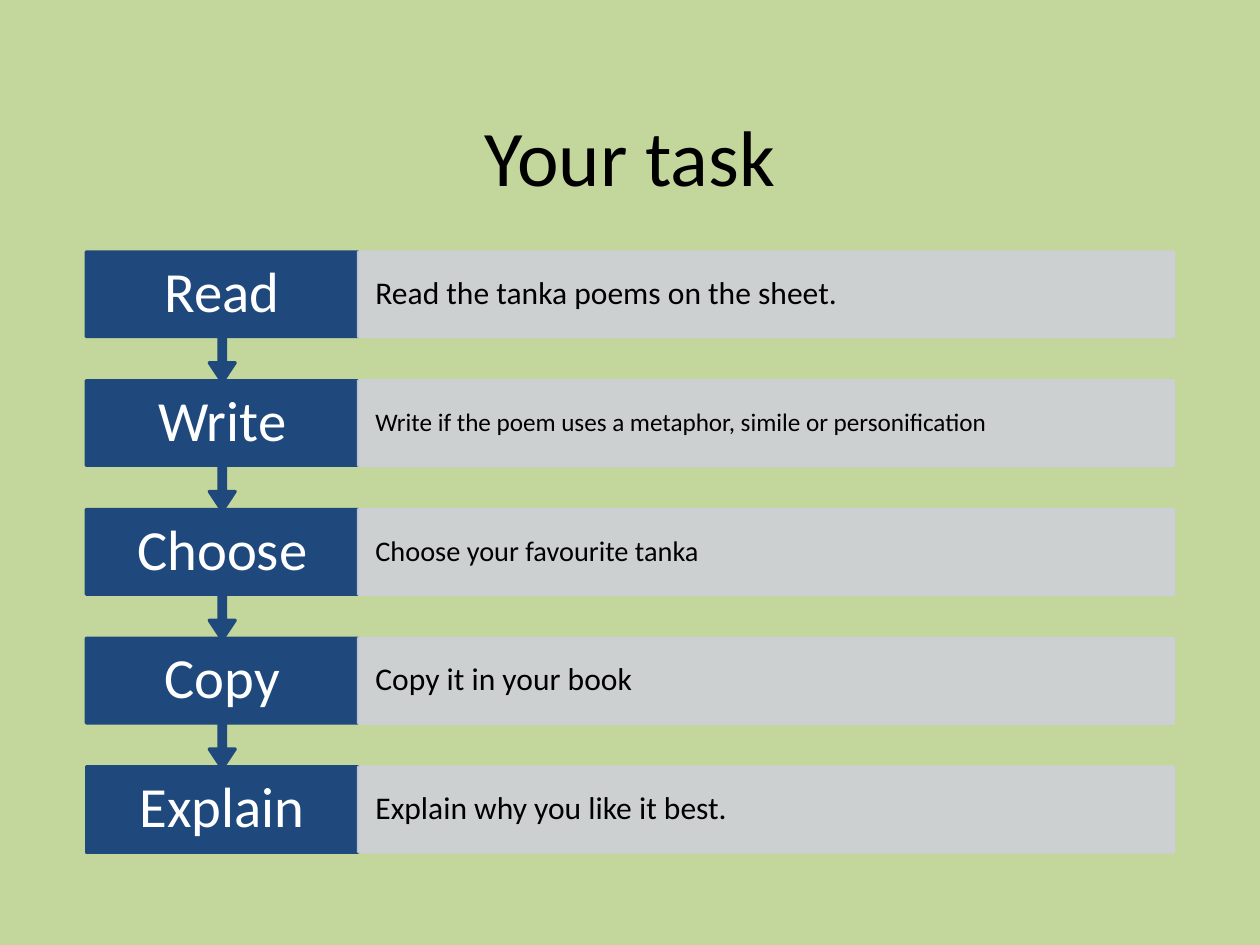
from lxml import etree
from pptx import Presentation
from pptx.dml.color import RGBColor
from pptx.enum.shapes import MSO_SHAPE
from pptx.enum.text import MSO_ANCHOR, PP_ALIGN
from pptx.oxml.ns import qn
from pptx.util import Inches, Pt

TITLE = "Your task"
STEPS = [
    ("Read", "Read the tanka poems on the sheet.", 20),
    ("Write", "Write if the poem uses a metaphor, simile or personification", 16),
    ("Choose", "Choose your favourite tanka", 18),
    ("Copy", "Copy it in your book", 20),
    ("Explain", "Explain why you like it best.", 20),
]

GREEN = RGBColor(0xC3, 0xD6, 0x9B)
NAVY = RGBColor(0x1F, 0x49, 0x7D)
GREY = RGBColor(0xCD, 0xD0, 0xD7)
BLACK = RGBColor(0, 0, 0)
WHITE = RGBColor(0xFF, 0xFF, 0xFF)
RECTANGLE = MSO_SHAPE.RECTANGLE
ARROW_BOX = MSO_SHAPE.DOWN_ARROW_CALLOUT
MIDDLE = MSO_ANCHOR.MIDDLE
LEFT, CENTER = PP_ALIGN.LEFT, PP_ALIGN.CENTER

FONT = "Calibri"
MARGIN = 0.76
VERB_WIDTH, DETAIL_WIDTH = 2.4, 7.19
FIRST_TOP, PITCH = 2.22, 1.135
BOX_HEIGHT, ARROW_BOX_HEIGHT = 0.75, 1.15
ARROW_PROPORTIONS = (0.05, 0.1, 0.15, 0.65)
OPACITY = 90


def write(shape, text, size, color, align, inset):
    frame = shape.text_frame
    frame.word_wrap = True
    frame.vertical_anchor = MIDDLE
    frame.margin_left = frame.margin_right = Inches(inset)
    frame.margin_top = frame.margin_bottom = 0
    paragraph = frame.paragraphs[0]
    paragraph.text = text
    paragraph.alignment = align
    paragraph.line_spacing = 0.9
    paragraph.font.name = FONT
    paragraph.font.size = Pt(size)
    paragraph.font.color.rgb = color


def add_box(slide, kind, left, top, width, height, color):
    box = slide.shapes.add_shape(
        kind, Inches(left), Inches(top), Inches(width), Inches(height))
    box.shadow.inherit = False
    box.fill.solid()
    box.fill.fore_color.rgb = color
    box.line.color.rgb = color
    box.line.width = Pt(2)
    return box


def make_translucent(box):
    for color in box._element.spPr.iter(qn("a:srgbClr")):
        etree.SubElement(color, qn("a:alpha")).set("val", str(OPACITY * 1000))


def add_step(slide, index):
    verb, detail, detail_size = STEPS[index]
    top = FIRST_TOP + index * PITCH
    if index == len(STEPS) - 1:
        verb_box = add_box(slide, RECTANGLE, MARGIN, top, VERB_WIDTH, BOX_HEIGHT, NAVY)
    else:
        verb_box = add_box(slide, ARROW_BOX, MARGIN, top, VERB_WIDTH, ARROW_BOX_HEIGHT, NAVY)
        for number, proportion in enumerate(ARROW_PROPORTIONS):
            verb_box.adjustments[number] = proportion
    write(verb_box, verb, 36, WHITE, CENTER, 0.17)

    detail_box = add_box(
        slide, RECTANGLE, MARGIN + VERB_WIDTH, top, DETAIL_WIDTH, BOX_HEIGHT, GREY)
    make_translucent(detail_box)
    write(detail_box, detail, detail_size, BLACK, LEFT, 0.15)


def main():
    deck = Presentation()
    deck.slide_width, deck.slide_height = Inches(11.11), Inches(8.33)
    slide = deck.slides.add_slide(deck.slide_layouts[6])
    slide.background.fill.solid()
    slide.background.fill.fore_color.rgb = GREEN

    title = slide.shapes.add_textbox(
        Inches(MARGIN), Inches(0.68), Inches(VERB_WIDTH + DETAIL_WIDTH), Inches(1.38))
    write(title, TITLE, 50, BLACK, CENTER, 0.1)
    title.text_frame.paragraphs[0].line_spacing = 1.0

    for index in reversed(range(len(STEPS))):
        add_step(slide, index)

    deck.save("out.pptx")


if __name__ == "__main__":
    main()
